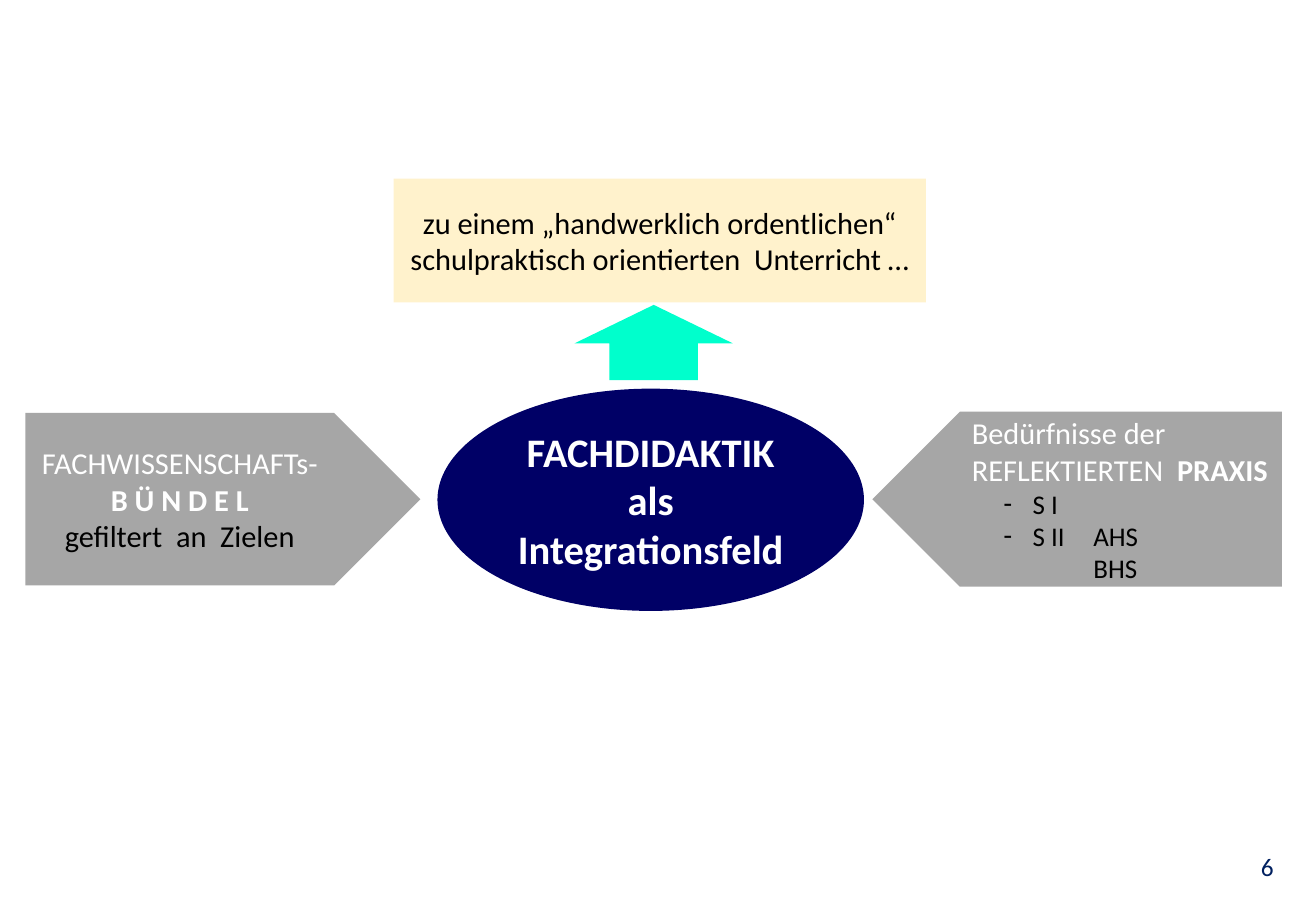
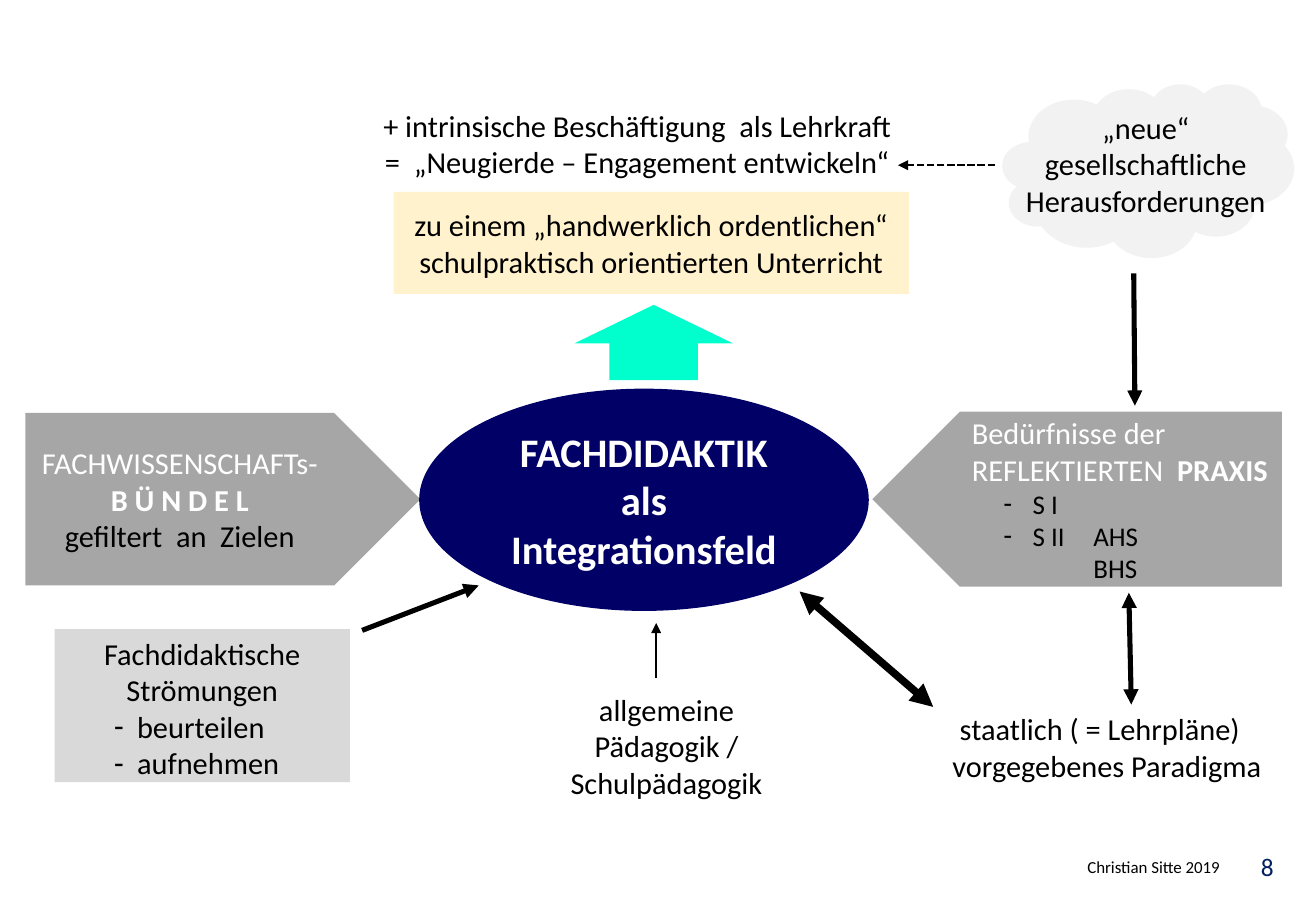
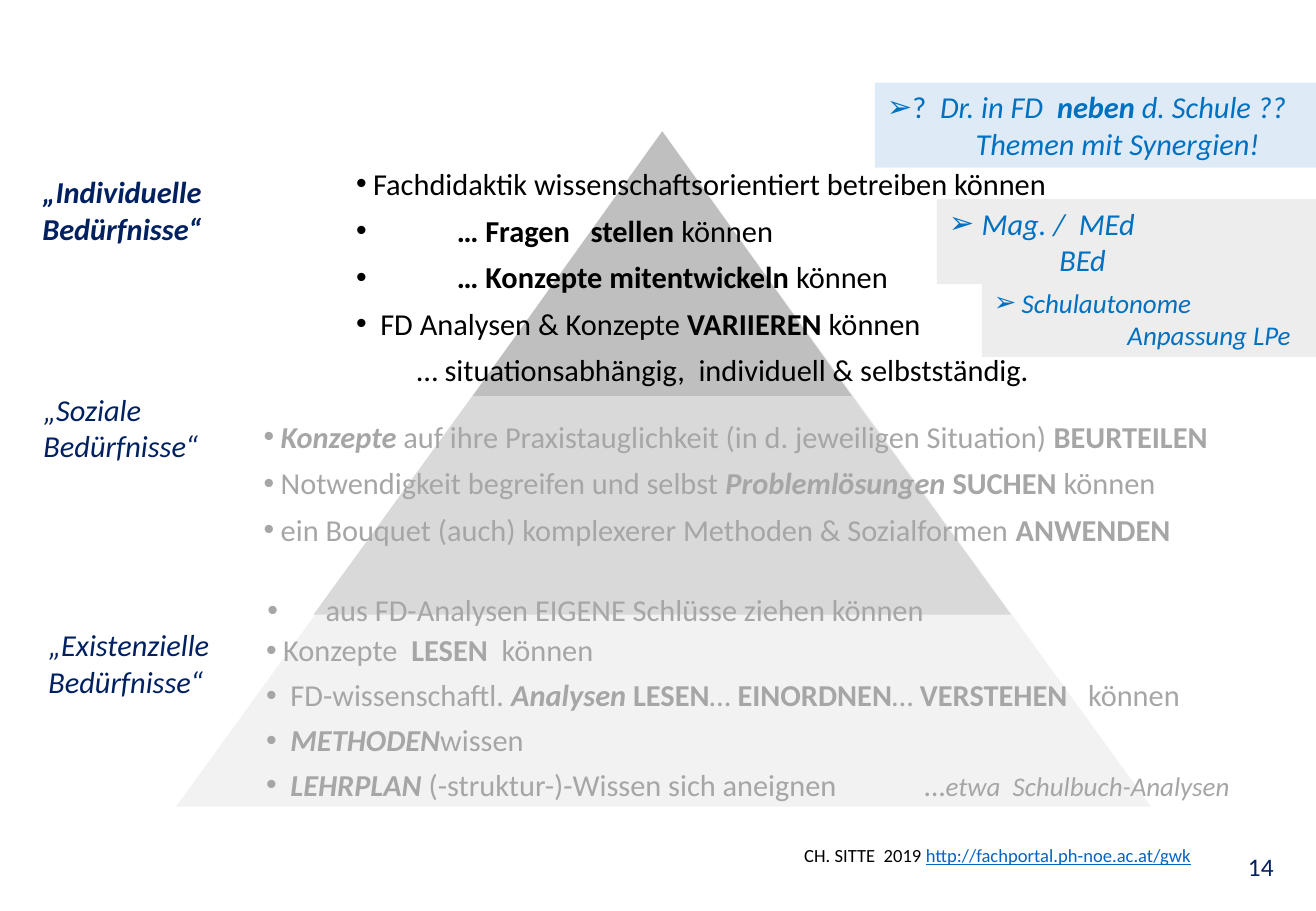
from lxml import etree
from pptx import Presentation
from pptx.dml.color import RGBColor
from pptx.enum.dml import MSO_LINE
from pptx.enum.shapes import MSO_CONNECTOR, MSO_SHAPE
from pptx.enum.text import MSO_ANCHOR as ANCHOR, MSO_AUTO_SIZE, PP_ALIGN as ALIGN
from pptx.oxml.ns import qn
from pptx.util import Inches, Pt

FONT = "Calibri"
COLORS = {
    "black": "000000", "white": "FFFFFF", "navy": "002060", "ellipse": "000066",
    "mint": "00FFCC", "cream": "FFF2CC", "block": "A6A6A6", "box": "D9D9D9",
    "cloud": "F2F2F2", "tip": "BFBFBF", "note": "EDEDED", "sky": "DEEBF7",
    "blue": "0070C0", "link": "0563C1",
}
BOLD = {"bold": True}
ITALIC = {"italic": True}
STRONG = BOLD | ITALIC
BLACK = {"color": "black"}
SMALL = BLACK | {"size": 16}
BLANK_LAYOUT, COMPARISON_LAYOUT = 6, 4


def rgb(name):
    return RGBColor.from_string(COLORS[name])


def line(*runs, **layout):
    """One paragraph: strings or (string, format) pairs, with its indent, bullet and tab."""
    return runs, layout


def add_child(parent, tag, **attributes):
    return etree.SubElement(parent, qn(tag), {key: str(value) for key, value in attributes.items()})


def lay_out(paragraph, indent=0, hang=0, bullet=None, bullet_color="black", tab=None):
    """Indents are measured from the left edge of the text area."""
    properties = paragraph._p.get_or_add_pPr()
    properties.set("marL", str(Inches(indent)))
    properties.set("indent", str(-Inches(hang)))
    if bullet:
        add_child(add_child(properties, "a:buClr"), "a:srgbClr", val=COLORS[bullet_color])
        add_child(properties, "a:buFont", typeface="Arial")
        add_child(properties, "a:buChar", char=bullet)
    else:
        add_child(properties, "a:buNone")
    if tab:
        add_child(add_child(properties, "a:tabLst"), "a:tab", pos=Inches(tab), algn="l")


def write(frame, lines, size=18, color="black", bold=False, italic=False,
          align=ALIGN.LEFT, anchor=ANCHOR.TOP, after=0):
    frame.word_wrap = True
    frame.auto_size = MSO_AUTO_SIZE.NONE
    frame.vertical_anchor = anchor
    base = {"size": size, "color": color, "bold": bold, "italic": italic}
    for number, item in enumerate(lines):
        runs, layout = line(item) if isinstance(item, str) else item
        paragraph = frame.add_paragraph() if number else frame.paragraphs[0]
        lay_out(paragraph, **layout)
        paragraph.alignment = align
        paragraph.line_spacing = 1.0
        paragraph.space_before = Pt(0)
        paragraph.space_after = Pt(after)
        for piece in runs:
            text, changes = (piece, {}) if isinstance(piece, str) else piece
            style = base | changes
            run = paragraph.add_run()
            run.text = text
            run.font.name = FONT
            run.font.size = Pt(style["size"])
            run.font.bold = style["bold"]
            run.font.italic = style["italic"]
            run.font.underline = style.get("underline", False)
            run.font.color.rgb = rgb(style["color"])


class Deck:
    def __init__(self):
        self.presentation = Presentation()
        self.presentation.slide_width = Inches(10.83)
        self.presentation.slide_height = Inches(7.5)
        self.slide = None

    def new_slide(self, number, layout=BLANK_LAYOUT):
        self.slide = self.presentation.slides.add_slide(self.presentation.slide_layouts[layout])
        if self.slide.shapes.title is not None:
            title = self.slide.shapes.title.element
            title.getparent().remove(title)
        self.text((7.62, 6.96, 2.96, 0.35), [number], size=15, color="navy", align=ALIGN.RIGHT)

    def text(self, at, lines, **style):
        box = self.slide.shapes.add_textbox(*map(Inches, at))
        write(box.text_frame, lines, **style)

    def body_list(self, index, at, lines, **style):
        """Fills a body placeholder and brings it to the front."""
        body = self.slide.placeholders[index]
        body.left, body.top, body.width, body.height = map(Inches, at)
        self.slide.shapes.element.append(body.element)
        write(body.text_frame, lines, **style)

    def shape(self, kind, at, fill, lines=(), adjust=(), anchor=ANCHOR.MIDDLE, **style):
        shape = self.slide.shapes.add_shape(kind, *map(Inches, at))
        shape.shadow.inherit = False
        shape.fill.solid()
        shape.fill.fore_color.rgb = rgb(fill)
        shape.line.fill.background()
        for index, value in enumerate(adjust):
            shape.adjustments[index] = value
        if lines:
            write(shape.text_frame, lines, anchor=anchor, **style)

    def arrow(self, start, end, width=3, both=False, dash=None):
        connector = self.slide.shapes.add_connector(
            MSO_CONNECTOR.STRAIGHT, *map(Inches, start + end))
        connector.line.color.rgb = rgb("black")
        connector.line.width = Pt(width)
        if dash:
            connector.line.dash_style = dash
        outline = connector.line._get_or_add_ln()
        if both:
            add_child(outline, "a:headEnd", type="triangle")
        add_child(outline, "a:tailEnd", type="triangle")
        add_child(connector._element.spPr, "a:effectLst")

    def integration_field(self, ellipse_left, ellipse_width):
        """The two block arrows, the ellipse between them and the arrow upwards."""
        self.shape(MSO_SHAPE.RIGHT_ARROW, (0.21, 3.4, 3.25, 1.42), "block", [
            "FACHWISSENSCHAFTs-",
            line(("B Ü N D E L", BOLD)),
            line(("gefiltert  an  Zielen", BLACK)),
        ], adjust=(1, 0.5), color="white", align=ALIGN.CENTER)
        dash = {"indent": 0.5, "hang": 0.24, "bullet": "-"}
        self.shape(MSO_SHAPE.LEFT_ARROW, (7.18, 3.39, 3.37, 1.44), "block", [
            "Bedürfnisse der",
            line("REFLEKTIERTEN  ", ("PRAXIS", BOLD)),
            line(("S I", SMALL), **dash),
            line(("S II\tAHS", SMALL), **dash),
            line(("BHS", SMALL), indent=1),
        ], adjust=(1, 0.5), color="white")
        self.shape(MSO_SHAPE.UP_ARROW, (4.73, 2.51, 1.3, 0.62), "mint", adjust=(0.56, 0.51))
        self.shape(MSO_SHAPE.OVAL, (ellipse_left, 3.2, ellipse_width, 1.83), "ellipse",
                   ["FACHDIDAKTIK", "als", "Integrationsfeld"],
                   size=24, color="white", bold=True, align=ALIGN.CENTER)

    def goal(self, at, lines):
        self.shape(MSO_SHAPE.RECTANGLE, at, "cream", lines, align=ALIGN.CENTER)

    def note(self, left, top, height, fill, first, second, hang, indent, size=18):
        """A note that runs to the right edge of the slide."""
        self.shape(MSO_SHAPE.RECTANGLE, (left, top, 10.83 - left, height), fill, [
            line(*first, indent=hang, hang=hang, bullet="➢", bullet_color="blue"),
            line(second, indent=indent),
        ], anchor=ANCHOR.TOP, size=size, color="blue", italic=True)


def field_slide(deck):
    deck.new_slide("6")
    deck.goal((3.24, 1.47, 4.38, 1.02),
              ["zu einem „handwerklich ordentlichen“ schulpraktisch orientierten  Unterricht …"])
    deck.integration_field(3.6, 3.51)


def influences_slide(deck):
    deck.new_slide("8")
    deck.shape(MSO_SHAPE.CLOUD, (8.25, 0.69, 2.4, 1.43), "cloud")
    deck.goal((3.24, 1.58, 4.24, 0.84),
              ["zu einem „handwerklich ordentlichen“", "schulpraktisch orientierten Unterricht"])
    deck.integration_field(3.45, 3.7)

    dash = {"indent": 0.58, "hang": 0.19, "bullet": "-"}
    deck.shape(MSO_SHAPE.RECTANGLE, (0.45, 5.18, 2.43, 0.84 * 1.5), "box",
               ["Fachdidaktische", "Strömungen"], align=ALIGN.CENTER, anchor=ANCHOR.TOP)
    deck.text((0.45, 5.78, 2.43, 0.66),
              [line("beurteilen", **dash), line("aufnehmen", **dash)])
    deck.text((4.33, 5.64, 2.31, 1), ["allgemeine", "Pädagogik / Schulpädagogik"],
              align=ALIGN.CENTER)
    deck.text((7.74, 5.8, 2.86, 0.7),
              [line("staatlich ( = Lehrpläne)", indent=0.06), "vorgegebenes Paradigma"])
    deck.text((2.86, 0.83, 4.77, 0.7),
              ["+ intrinsische Beschäftigung  als Lehrkraft",
               "=  „Neugierde – Engagement entwickeln“"], align=ALIGN.CENTER)
    deck.text((8.3, 0.85, 2.26, 1), ["„neue“", "gesellschaftliche Herausforderungen"],
              align=ALIGN.CENTER)

    deck.arrow((6.58, 4.87), (7.68, 5.82), width=4.5, both=True)
    deck.arrow((9.29, 4.88), (9.31, 5.8), both=True)
    deck.arrow((9.33, 2.25), (9.34, 3.34))
    deck.arrow((2.98, 5.19), (3.94, 4.82))
    deck.arrow((5.4, 5.58), (5.4, 5.13), width=1.5)
    deck.arrow((8.19, 1.36), (7.39, 1.36), width=1.5, dash=MSO_LINE.SQUARE_DOT)
    deck.text((8.85, 7, 1.4, 0.27), ["Christian Sitte 2019"], size=10)


def pyramid_slide(deck):
    deck.new_slide("14", COMPARISON_LAYOUT)
    for at, fill in (((1.45, 1.1, 8.02, 5.54), "cloud"),
                     ((2.58, 1.11, 5.74, 3.95), "box"),
                     ((3.89, 1.08, 3.12, 2.18), "tip")):
        deck.shape(MSO_SHAPE.ISOSCELES_TRIANGLE, at, fill)
    for left, top, need, bold in ((0.25, 1.38, "Individuelle", True),
                                  (0.26, 3.17, "Soziale", False),
                                  (0.3, 5.11, "Existenzielle", False)):
        deck.text((left, top, 1.67, 0.7), [f"„{need} Bedürfnisse“"],
                  color="navy", bold=bold, italic=True)

    def point(hang, *runs, color="block", tab=None):
        return line(*runs, indent=hang, hang=hang, bullet="•", bullet_color=color, tab=tab)

    deck.body_list(1, (2.09, 5.15, 8.5, 1.51), [
        point(0.14, "Konzepte  ", ("LESEN", BOLD), "  können"),
        point(0.2, "FD-wissenschaftl. ", ("Analysen", STRONG), (" LESEN", BOLD), "… ",
              ("EINORDNEN", BOLD), "… ", ("VERSTEHEN", BOLD), "   können"),
        point(0.2, ("METHODEN", STRONG), "wissen"),
        point(0.2, ("LEHRPLAN ", STRONG), "(-struktur-)-Wissen sich aneignen\t", ("…", ITALIC),
              ("etwa  Schulbuch-Analysen", ITALIC | {"size": 16}), tab=5.42),
    ], color="block", after=5)
    deck.body_list(2, (2.07, 3.39, 8.46, 1.17), [
        point(0.14, ("Konzepte", STRONG),
              " auf ihre Praxistauglichkeit (in d. jeweiligen Situation) ", ("BEURTEILEN", BOLD)),
        point(0.14, "Notwendigkeit begreifen und selbst ", ("Problemlösungen", STRONG),
              (" SUCHEN ", BOLD), "können"),
        point(0.14, "ein Bouquet (auch) komplexerer Methoden & Sozialformen ",
              ("ANWENDEN", BOLD)),
    ], color="block", after=6)
    deck.body_list(3, (2.1, 4.82, 7.34, 0.4), [
        point(0.48, "aus FD-Analysen EIGENE Schlüsse ziehen können"),
    ], color="block")
    deck.body_list(4, (2.83, 1.31, 6.39, 1.93), [
        point(0.14, "Fachdidaktik wissenschaftsorientiert betreiben können", color="black"),
        point(0.83, ("… Fragen   stellen ", BOLD), "können", color="black"),
        point(0.83, ("… Konzepte mitentwickeln", BOLD), " können", color="black"),
        point(0.2, "FD Analysen & Konzepte ", ("VARIIEREN", BOLD), " können", color="black"),
        line("… situationsabhängig,  individuell & selbstständig.", indent=0.5),
    ], after=6)

    deck.note(8.08, 2.31, 0.63, "note", ["Schulautonome"], "Anpassung LPe", 0.23, 1.1, size=16)
    deck.note(7.71, 1.64, 0.7, "note", ["Mag. /  MEd"], "BEd", 0.27, 0.91)
    deck.note(7.2, 0.68, 0.7, "sky",
              [("?  ", {"italic": False}), "Dr. in FD  ", ("neben", BOLD), " d. Schule ??"],
              "Themen mit Synergien!", 0.2, 0.73)
    deck.text((6.52, 6.9, 3.72, 0.47), [
        line("CH. SITTE  2019\t",
             ("http://fachportal.ph-noe.ac.at/gwk", {"color": "link", "underline": True}),
             tab=1.17),
    ], size=11)


def main():
    deck = Deck()
    field_slide(deck)
    influences_slide(deck)
    pyramid_slide(deck)
    deck.presentation.save("out.pptx")


if __name__ == "__main__":
    main()
